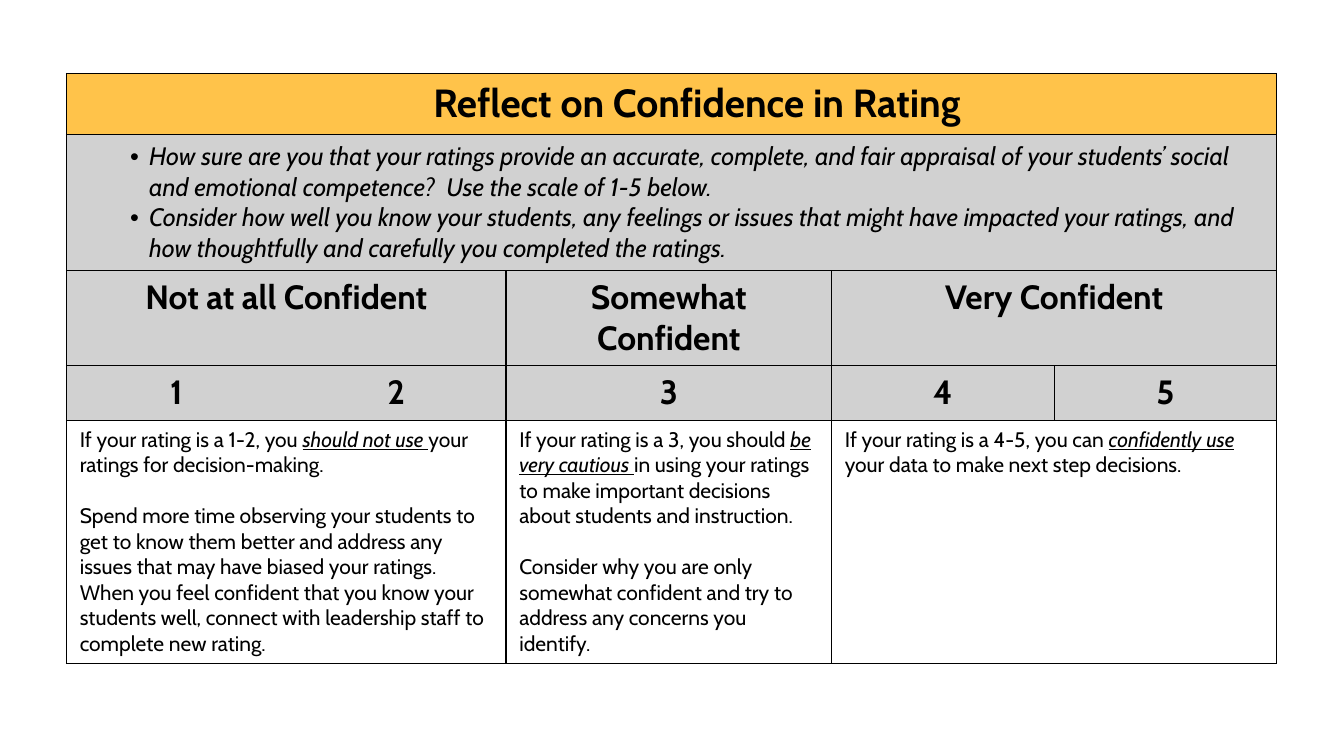
"""Builds a slide with a table for reflecting on confidence in ratings."""
from lxml.etree import SubElement
from pptx import Presentation
from pptx.dml.color import RGBColor
from pptx.enum.text import PP_ALIGN
from pptx.oxml.ns import qn
from pptx.util import Pt


def color(code):
    return RGBColor.from_string(code)


def edge(cell, side):
    line = SubElement(cell._tc.get_or_add_tcPr(), qn("a:ln" + side), w=str(Pt(1)))
    fill = SubElement(line, qn("a:solidFill"))
    SubElement(fill, qn("a:srgbClr"), val="000000")


GOLD, GRAY = "FFC34A", "D1D1D1"
TITLE = {"size": Pt(28), "bold": True}
PROMPT = {"size": Pt(18), "italic": True}
HEAD = {"size": Pt(24), "bold": True}
BODY = {"size": Pt(15)}
STRESS = {"italic": True, "underline": True}

rows = [
    (GOLD, TITLE, [(0, 5, ["Reflect on Confidence in Rating"])]),
    (GRAY, PROMPT, [(0, 5, [
        "How sure are you that your ratings provide an accurate, complete, and fair appraisal "
        "of your students’ social and emotional competence?  Use the scale of 1-5 below.",
        "Consider how well you know your students, any feelings or issues that might have "
        "impacted your ratings, and how thoughtfully and carefully you completed the ratings."])]),
    (GRAY, HEAD, [(0, 2, ["Not at all Confident"]), (2, 1, ["Somewhat Confident"]),
                  (3, 2, ["Very Confident"])]),
    (GRAY, HEAD, [(col, 1, [str(col + 1)]) for col in range(5)]),
    (None, BODY, [
        (0, 2, [
            "If your rating is a 1-2, you *should not use *your ratings for decision-making.",
            "Spend more time observing your students to get to know them better and address any "
            "issues that may have biased your ratings.  When you feel confident that you know "
            "your students well, connect with leadership staff to complete new rating."]),
        (2, 1, [
            "If your rating is a 3, you should *be very cautious *in using your ratings to make "
            "important decisions about students and instruction.",
            "Consider why you are only somewhat confident and try to address any concerns you "
            "identify."]),
        (3, 2, ["If your rating is a 4-5, you can *confidently use *your data to make next step "
                "decisions."])]),
]

deck = Presentation()
deck.slide_width, deck.slide_height = Pt(960), Pt(540)
slide = deck.slides.add_slide(deck.slide_layouts[6])

frame = slide.shapes.add_table(5, 5, Pt(47.5), Pt(52.5), Pt(864.5), Pt(435))
table = frame.table
table.first_row = table.horz_banding = False
style = table._tbl.tblPr.find(qn("a:tableStyleId"))
style.text = "{2D5ABB26-0587-4C30-8999-92F81FD0307C}"
for col, width in zip(table.columns, (157, 157, 232.5, 159, 159)):
    col.width = Pt(width)
for row, height in zip(table.rows, (39, 39, 39, 39, 168)):
    row.height = Pt(height)

for top, (fill, look, cells) in enumerate(rows):
    for left, span, texts in cells:
        cell = table.cell(top, left)
        if span > 1:
            cell.merge(table.cell(top, left + span - 1))
        for part in range(left, left + span):
            for side in "LRTB":
                if (top, part, side) not in ((3, 0, "R"), (3, 1, "L")):
                    edge(table.cell(top, part), side)
        if fill:
            cell.fill.solid()
            cell.fill.fore_color.rgb = color(fill)
        else:
            cell.fill.background()
        cell.margin_left = cell.margin_right = Pt(9.5)
        cell.margin_top = cell.margin_bottom = Pt(4.75)

        box = cell.text_frame
        for spot, text in enumerate(texts):
            para = box.add_paragraph() if spot else box.paragraphs[0]
            props = para._p.get_or_add_pPr()
            if look is PROMPT:
                para.level = 1
                props.set("marL", str(Pt(49.5)))
                props.set("indent", str(-Pt(13.5)))
                SubElement(props, qn("a:buFont"), typeface="Arial")
                SubElement(props, qn("a:buChar"), char="•")
            elif look is BODY:
                if spot:
                    para.space_before = Pt(18.2)
            else:
                para.alignment = PP_ALIGN.CENTER
            if look is TITLE:
                para.level = 1
                props.set("marL", str(Pt(36)))
                props.set("indent", "0")
            for turn, words in enumerate(text.split("*")):
                run = para.add_run()
                run.text = words
                run.font.name = "Cabin"
                run.font.color.rgb = color("000000")
                for key, value in {**look, **(STRESS if turn % 2 else {})}.items():
                    setattr(run.font, key, value)

deck.save("out.pptx")
